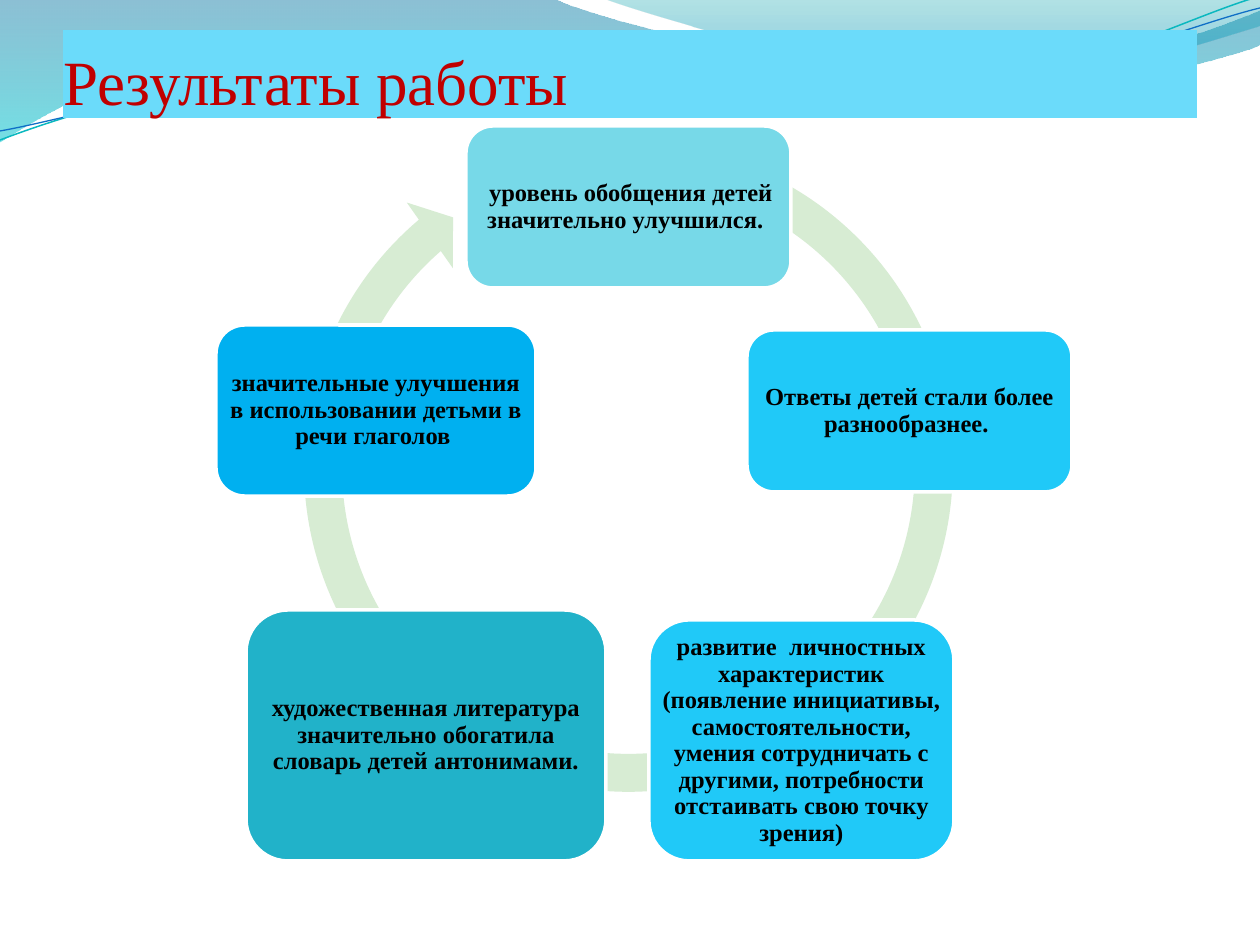
"""Build a results slide: a title over waves and a cycle of five outcome cards."""
from lxml.etree import SubElement
from pptx import Presentation
from pptx.dml.color import RGBColor
from pptx.enum.shapes import MSO_SHAPE as Preset
from pptx.enum.text import MSO_ANCHOR as Anchor, MSO_AUTO_SIZE as AutoSize, PP_ALIGN as Align
from pptx.oxml.ns import qn
from pptx.util import Pt

SCALE = 914400 / 126
SLIDE = (1260, 945)
FONT = "Times New Roman"

TITLE = "Результаты работы"
TITLE_BOX = (63, 30, 1134, 88)
CYCLE_BOX = (283, 122, 691, 691)
CYCLE_ADJUSTMENTS = (0.055, 3.307, 137.666, 173.916, 0.058)

CARDS = [
    ((466, 126, 325, 162), "77D9E8",
     [(" ", "Vollkorn"), ("уровень обобщения детей значительно улучшился. ", FONT)]),
    ((747, 330, 325, 162), "20C9F8",
     [("Ответы детей стали более разнообразнее. ", FONT)]),
    ((649, 620, 305, 241), "20C9F8",
     [("развитие  личностных характеристик (появление инициативы, "
       "самостоятельности, умения сотрудничать с другими, потребности "
       "отстаивать свою точку зрения)", FONT)]),
    ((246, 610, 360, 251), "21B2C9",
     [("художественная литература значительно обогатила словарь детей "
       "антонимами.", FONT)]),
    ((216, 325, 320, 171), "00B0F0",
     [("значительные улучшения в использовании детьми в речи глаголов ", FONT)]),
]

WAVES = [
    ([(0, 0), (554, -1), (600, 21, 837, 79, 955, 79), (1074, 79, 1207, 33, 1260, 11),
      (1261, 45), (1239, 55, 1096, 96, 940, 94), (784, 94, 481, 35, 324, 43),
      (163, 45, 58, 105, -1, 142)],
     [(0, "0074A1", 45), (1, "00C6CF", 55)]),
    ([(604, -1), (642, 14, 859, 78, 969, 82), (1079, 87, 1211, 40, 1260, 26), (1260, 0)],
     [(0, "00A1A9", 30), (0.8, "008BBF", 45)]),
]
STRANDS = [
    ([(0, 140), (60, 117, 199, 72, 349, 66), (498, 59, 747, 112, 898, 101),
      (1050, 89, 1182, 19, 1257, -3)], "0AB8BF", 0.85),
    ([(0, 131), (59, 121, 207, 77, 357, 71), (508, 64, 752, 106, 903, 94),
      (1053, 84, 1186, 26, 1260, 8)], "0F6FC6", 0.75),
]


def px(*lengths):
    return [round(length * SCALE) for length in lengths]


def color(value):
    return RGBColor.from_string(value)


def add_outline(slide, segments, close):
    """Draw an outline whose six-number segments are cubic curves."""
    start, *rest = segments
    points = [px(*segment[at:at + 2]) for segment in rest
              for at in range(0, len(segment), 2)]
    builder = slide.shapes.build_freeform(*px(*start))
    builder.add_line_segments(points, close=close)
    shape = builder.convert_to_shape()
    shape.shadow.inherit = False
    steps = iter(list(shape._element.spPr.iter(qn("a:lnTo"))))
    for segment in rest:
        step = next(steps)
        if len(segment) == 6:
            curve = step.makeelement(qn("a:cubicBezTo"))
            step.addprevious(curve)
            for old in (step, next(steps), next(steps)):
                curve.append(old[0])
                old.getparent().remove(old)
    return shape


def add_wave(slide, segments, stops):
    shape = add_outline(slide, segments, True)
    shape.line.fill.background()
    shape.fill.gradient()
    shape.fill.gradient_angle = 270
    for stop, (position, value, _) in zip(shape.fill.gradient_stops, stops):
        stop.position = position
        stop.color.rgb = color(value)
    tints = shape._element.spPr.iter(qn("a:srgbClr"))
    for tint, (_, _, opacity) in zip(list(tints), stops):
        SubElement(tint, qn("a:alpha")).set("val", str(opacity * 1000))


def add_strand(slide, segments, value, width):
    shape = add_outline(slide, segments, False)
    shape.fill.background()
    shape.line.color.rgb = color(value)
    shape.line.width = Pt(width)


def add_preset(slide, preset, box, fill):
    shape = slide.shapes.add_shape(preset, *px(*box))
    shape.shadow.inherit = False
    shape.fill.solid()
    shape.fill.fore_color.rgb = color(fill)
    shape.line.fill.background()
    return shape


def write(shape, spans, size, value, bold=False, align=Align.CENTER,
          anchor=Anchor.MIDDLE, top=0, spacing=1.0):
    frame = shape.text_frame
    frame.word_wrap = True
    frame.auto_size = AutoSize.NONE
    frame.vertical_anchor = anchor
    frame.margin_left = frame.margin_right = frame.margin_bottom = 0
    frame.margin_top = px(top)[0]
    para = frame.paragraphs[0]
    para.alignment = align
    para.line_spacing = spacing
    for text, font in spans:
        span = para.add_run()
        span.text = text
        span.font.name = font
        span.font.size = Pt(size)
        span.font.bold = bold
        span.font.color.rgb = color(value)


def add_title(slide):
    title = slide.shapes.title
    title.left, title.top, title.width, title.height = px(*TITLE_BOX)
    title.fill.solid()
    title.fill.fore_color.rgb = color("6BDBFA")
    write(title, [(TITLE, FONT)], 36, "C00000", align=Align.LEFT,
          anchor=Anchor.BOTTOM, top=6)
    slide.shapes._spTree.append(title._element)


def add_cycle(slide):
    arrow = add_preset(slide, Preset.CIRCULAR_ARROW, CYCLE_BOX, "D7ECD3")
    for index, value in enumerate(CYCLE_ADJUSTMENTS):
        arrow.adjustments[index] = value
    for box, fill, spans in CARDS:
        card = add_preset(slide, Preset.ROUNDED_RECTANGLE, box, fill)
        card.line.color.rgb = color("FFFFFF")
        card.line.width = Pt(2)
        write(card, spans, 14, "000000", bold=True, spacing=0.9)


def main():
    deck = Presentation()
    deck.slide_width, deck.slide_height = px(*SLIDE)
    slide = deck.slides.add_slide(deck.slide_layouts.get_by_name("Title Only"))
    for wave in WAVES:
        add_wave(slide, *wave)
    for strand in STRANDS:
        add_strand(slide, *strand)
    add_title(slide)
    add_cycle(slide)
    deck.save("out.pptx")


if __name__ == "__main__":
    main()
